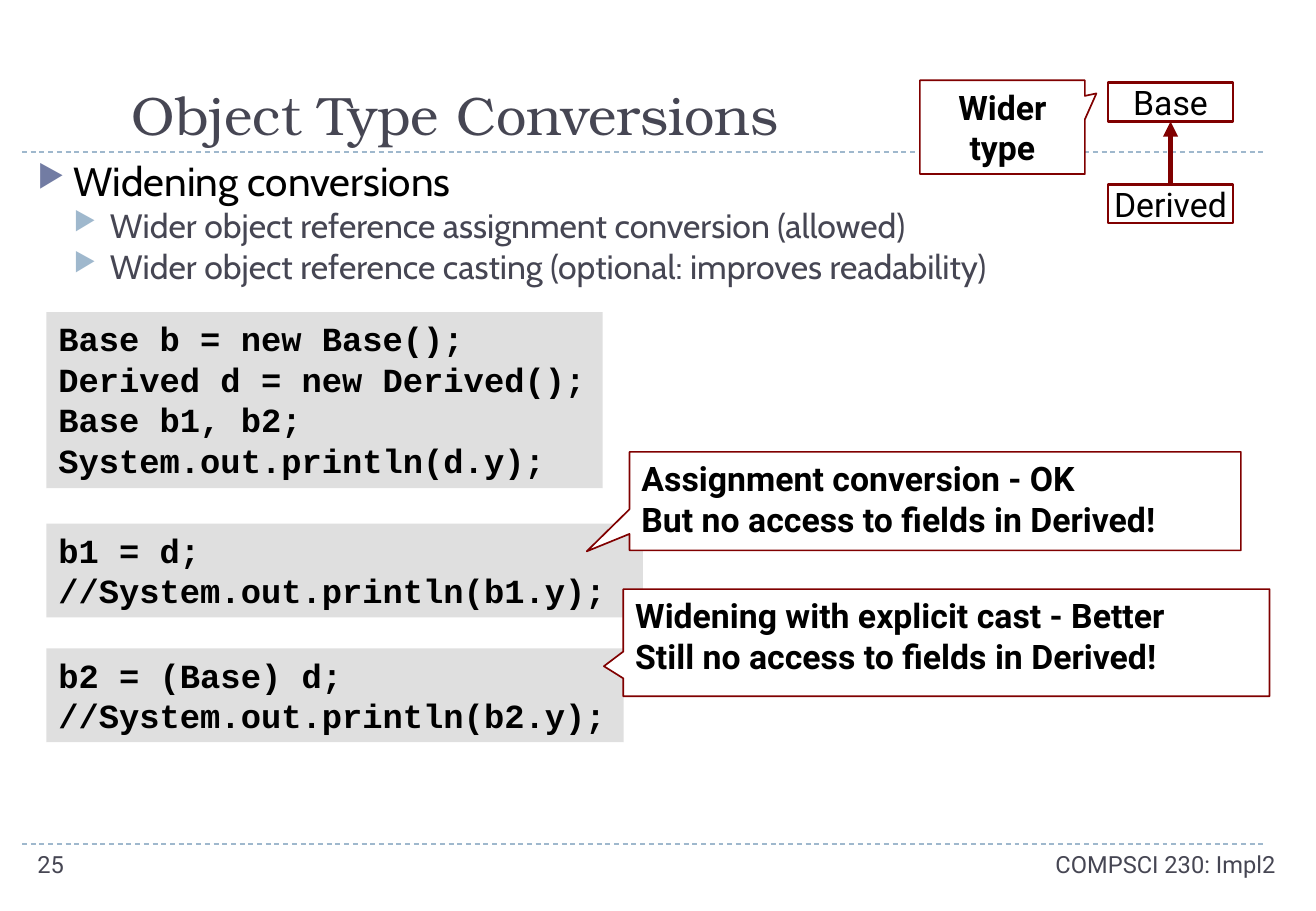
from lxml import etree
from pptx import Presentation
from pptx.dml.color import RGBColor
from pptx.enum.dml import MSO_LINE
from pptx.enum.shapes import MSO_CONNECTOR, MSO_SHAPE
from pptx.enum.text import MSO_ANCHOR, PP_ALIGN
from pptx.oxml.ns import qn
from pptx.util import Cm, Pt

MAROON, SLATE, PALE_BLUE, BLACK = "800000", "464653", "9FB8CD", "000000"
RULE_LEFT, RULE_RIGHT, TITLE_RULE, FOOTER_RULE = 0.46, 26.47, 3.18, 17.65

CODE_BLOCKS = [
    ((0.97, 6.53, 11.63, 3.68),
     "Base b = new Base();\nDerived d = new Derived();\nBase b1, b2;\nSystem.out.println(d.y);"),
    ((0.97, 10.95, 12.47, 1.96), "b1 = d;\n//System.out.println(b1.y);"),
    ((0.97, 13.56, 12.07, 1.96), "b2 = (Base) d;\n//System.out.println(b2.y);"),
]
# box, pointer tip relative to the centre, text, alignment
CALLOUTS = [
    ((19.23, 1.68, 3.45, 1.96), (0.57, -0.36), "Wider type", PP_ALIGN.CENTER),
    ((13.16, 9.45, 12.78, 2.06), (-0.57, 0.51),
     "Assignment conversion - OK\nBut no access to fields in Derived!", PP_ALIGN.LEFT),
    ((13.03, 12.32, 13.51, 2.24), (-0.53, 0.22),
     "Widening with explicit cast - Better\nStill no access to fields in Derived!", PP_ALIGN.LEFT),
]
BULLETS = [
    (0, "Widening conversions"),
    (1, "Wider object reference assignment conversion (allowed)"),
    (1, "Wider object reference casting (optional: improves readability)"),
]


def colour(value):
    return RGBColor.from_string(value)


def cm(*lengths):
    return [Cm(length) for length in lengths]


def add_element(parent, tag, **attributes):
    return etree.SubElement(parent, qn(tag), attributes)


def style_font(font, name, size, ink, bold=False):
    font.name, font.size, font.bold = name, Pt(size), bold
    font.color.rgb = colour(ink)


def write(shape, text, font, size, ink, bold=False, align=PP_ALIGN.LEFT,
          anchor=MSO_ANCHOR.TOP, wrap=True):
    frame = shape.text_frame
    frame.text = text
    frame.word_wrap = wrap
    frame.vertical_anchor = anchor
    for para in frame.paragraphs:
        para.alignment = align
        for span in para.runs:
            style_font(span.font, font, size, ink, bold)


def add_label(page, box, text, font, size, **layout):
    write(page.shapes.add_textbox(*cm(*box)), text, font, size, SLATE, **layout)


def add_panel(page, kind, box, fill=None, line_width=None):
    shape = page.shapes.add_shape(kind, *cm(*box))
    shape.shadow.inherit = False
    if fill:
        shape.fill.solid()
        shape.fill.fore_color.rgb = colour(fill)
    else:
        shape.fill.background()
    if line_width:
        shape.line.color.rgb = colour(MAROON)
        shape.line.width = Pt(line_width)
    else:
        shape.line.fill.background()
    return shape


def add_line(page, start, end, ink, width):
    line = page.shapes.add_connector(MSO_CONNECTOR.STRAIGHT, *cm(*start, *end))
    line.line.color.rgb = colour(ink)
    line.line.width = Pt(width)
    add_element(line._element.spPr, "a:effectLst")
    return line


def add_frame(page):
    """Dashed rules, title and footer."""
    for y in (FOOTER_RULE, TITLE_RULE):
        rule = add_line(page, (RULE_LEFT, y), (RULE_RIGHT, y), PALE_BLUE, 0.75)
        rule.line.dash_style = MSO_LINE.DASH
    add_label(page, (2.51, 0.43, 24.26, TITLE_RULE - 0.43), "Object Type Conversions",
              "TeX Gyre Bonum", 32, anchor=MSO_ANCHOR.BOTTOM)
    add_label(page, (20.04, FOOTER_RULE, 6.88, 1.02), "COMPSCI 230: Impl2",
              "Roboto", 14, align=PP_ALIGN.RIGHT)
    add_label(page, (0.53, FOOTER_RULE, 5.97, 1.02), "25", "Roboto", 14)


def add_bullets(page, box):
    frame = page.shapes.add_textbox(*cm(*box)).text_frame
    frame.word_wrap = True
    frame.text = "\n".join(text for _, text in BULLETS)
    for index, (para, (level, _)) in enumerate(zip(frame.paragraphs, BULLETS)):
        para.level = level
        props = para._p.get_or_add_pPr()
        props.set("marL", str(Cm(0.76 * (level + 1))))
        props.set("indent", str(Cm(-0.76)))
        marker = add_element(props, "a:buClr")
        add_element(marker, "a:srgbClr", val=PALE_BLUE if level else "727CA3")
        add_element(props, "a:buSzPct", val="76000")
        add_element(props, "a:buChar", char="▶")
        para.line_spacing = 0.8
        para.space_before = Pt(5 if index else 0)
        size, ink = (20, SLATE) if level else (24, BLACK)
        style_font(para.runs[0].font, "Cabin", size, ink)


def add_code(page, box, text):
    block = add_panel(page, MSO_SHAPE.RECTANGLE, box, fill="C0C0C0")
    add_element(block._element.spPr.find(".//" + qn("a:srgbClr")), "a:alpha", val="50000")
    write(block, text, "Courier New", 20, BLACK, bold=True)


def add_callout(page, box, tip, text, align):
    callout = add_panel(page, MSO_SHAPE.RECTANGULAR_CALLOUT, box, "FFFFFF", 1)
    callout.adjustments[0], callout.adjustments[1] = tip
    write(callout, text, "Roboto", 20, BLACK, bold=True, align=align)


def add_class_diagram(page, box):
    """Base above Derived, with an inheritance arrow between them."""
    left, top, width, height = box
    class_height = 0.81
    derived_top = top + height - class_height
    for name, y in (("Base", top), ("Derived", derived_top)):
        shape = add_panel(page, MSO_SHAPE.RECTANGLE, (left, y, width, class_height),
                          line_width=1.5)
        write(shape, name, "Roboto", 20, BLACK, align=PP_ALIGN.CENTER,
              anchor=MSO_ANCHOR.MIDDLE, wrap=False)
    middle = left + width / 2
    arrow = add_line(page, (middle, derived_top), (middle, top + class_height), MAROON, 3)
    add_element(arrow.line._get_or_add_ln(), "a:tailEnd", type="triangle")


def main():
    deck = Presentation()
    deck.slide_width, deck.slide_height = cm(27.51, 19.05)
    page = deck.slides.add_slide(deck.slide_layouts[6])
    add_frame(page)
    add_bullets(page, (0.53, 3.33, 26.01, 14.4))
    for block in CODE_BLOCKS:
        add_code(page, *block)
    add_class_diagram(page, (23.16, 1.73, 2.62, 2.94))
    for callout in CALLOUTS:
        add_callout(page, *callout)
    deck.save("out.pptx")


if __name__ == "__main__":
    main()
